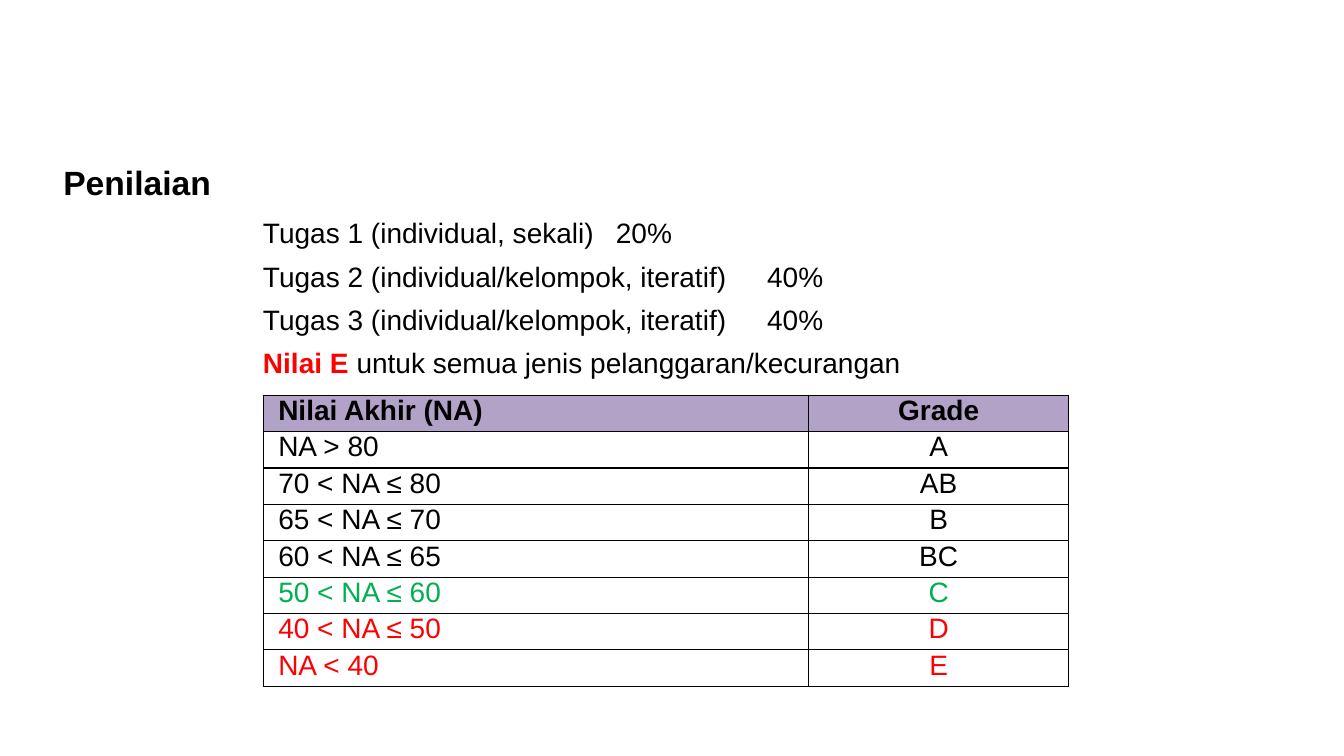
from dataclasses import dataclass

from lxml.etree import SubElement
from pptx import Presentation
from pptx.dml.color import RGBColor as RGB
from pptx.enum.text import MSO_ANCHOR as Anchor, PP_ALIGN as Align
from pptx.oxml.ns import qn
from pptx.util import Inches, Pt


@dataclass(frozen=True)
class Theme:
    face: str = "Arial"
    heading: int = 24
    body: int = 20
    ink: RGB = RGB(0, 0, 0)
    alert: RGB = RGB(0xFF, 0, 0)
    passing: RGB = RGB(0, 0xB0, 0x50)
    header: RGB = RGB(0xB3, 0xA2, 0xC7)


theme = Theme()


def style(font, size=theme.body, color=theme.ink, bold=False):
    font.name, font.size, font.bold = theme.face, Pt(size), bold
    font.color.rgb = color


def add_text_frame(left, top, width, height):
    """Add a wrapping text box, in inches, with even insets."""
    frame = slide.shapes.add_textbox(*map(Inches, (left, top, width, height))).text_frame
    frame.word_wrap = True
    frame.margin_left = frame.margin_right = Inches(0.1)
    frame.margin_top = frame.margin_bottom = Inches(0.1)
    return frame


prs = Presentation()
prs.slide_width, prs.slide_height = Inches(13.33), Inches(7.5)
slide = prs.slides.add_slide(prs.slide_layouts[6])

# Heading
heading = add_text_frame(0.53, 1.46, 12.14, 0.7)
heading.vertical_anchor = Anchor.MIDDLE
heading.text = "Penilaian"
style(heading.paragraphs[0].font, theme.heading, bold=True)

# Weight of each assignment, with the tab stop where its share starts
INDENT = 0.23
assignments = [
    ("Tugas 1 (individual, sekali)", "20%", 4),
    ("Tugas 2 (individual/kelompok, iteratif)", "40%", 5),
    ("Tugas 3 (individual/kelompok, iteratif)", "40%", 5),
]
weights = add_text_frame(2.28, 2.04, 8.89, 1.92)
for index, (assignment, share, stop) in enumerate(assignments):
    line = weights.paragraphs[0] if index == 0 else weights.add_paragraph()
    line.text = f"{assignment}\t{share}"
    tabs = SubElement(line._p.get_or_add_pPr(), qn("a:tabLst"))
    SubElement(tabs, qn("a:tab"), pos=str(Inches(INDENT + stop)), algn="l")
    style(line.font)

warning = weights.add_paragraph()
for words, color, bold in (
    ("Nilai E ", theme.alert, True),
    ("untuk semua jenis pelanggaran/kecurangan", theme.ink, False),
):
    run = warning.add_run()
    run.text = words
    style(run.font, color=color, bold=bold)

for index, line in enumerate(weights.paragraphs):
    line._p.get_or_add_pPr().set("marL", str(Inches(INDENT)))
    line._p.get_or_add_pPr().set("indent", "0")
    if index:
        line.space_before = Pt(7)

# Grade scale
grades = [
    ("Nilai Akhir (NA)", "Grade", theme.ink),
    ("NA > 80", "A", theme.ink),
    ("70 < NA ≤ 80", "AB", theme.ink),
    ("65 < NA ≤ 70", "B", theme.ink),
    ("60 < NA ≤ 65", "BC", theme.ink),
    ("50 < NA ≤ 60", "C", theme.passing),
    ("40 < NA ≤ 50", "D", theme.alert),
    ("NA < 40", "E", theme.alert),
]
column_widths = (5.41, 2.58)
scale = slide.shapes.add_table(
    len(grades), len(column_widths),
    Inches(2.61), Inches(3.92), Inches(sum(column_widths)), Inches(2.89),
).table
for column, width in zip(scale.columns, column_widths):
    column.width = Inches(width)

for row, (score, grade, color) in enumerate(grades):
    for col, words in enumerate((score, grade)):
        cell = scale.cell(row, col)
        cell.margin_left = Inches(0.07 if col else 0.15)
        cell.margin_right = Inches(0.07)
        cell.margin_top = cell.margin_bottom = 0
        cell.text = words
        entry = cell.text_frame.paragraphs[0]
        entry.alignment = Align.CENTER if col else Align.LEFT
        style(entry.font, color=color, bold=row == 0)
        properties = cell._tc.get_or_add_tcPr()
        for side in ("lnL", "lnR", "lnT", "lnB"):
            border = SubElement(properties, qn(f"a:{side}"), w=str(Pt(1)))
            paint = SubElement(border, qn("a:solidFill"))
            SubElement(paint, qn("a:srgbClr"), val=str(theme.ink))
        if row == 0:
            cell.fill.solid()
            cell.fill.fore_color.rgb = theme.header
        else:
            cell.fill.background()

prs.save("out.pptx")
